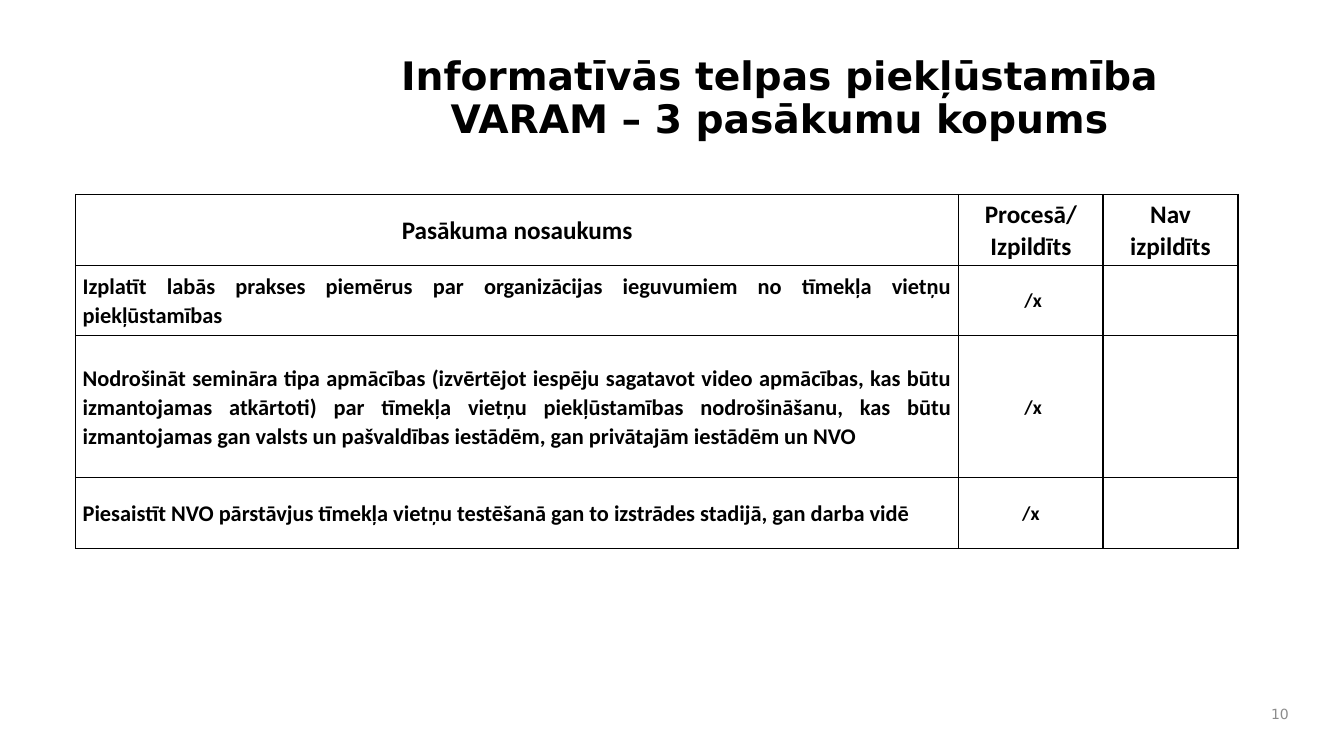
from lxml.etree import SubElement
from pptx import Presentation
from pptx.dml.color import RGBColor
from pptx.enum.text import MSO_ANCHOR as Anchor, MSO_AUTO_SIZE as AutoSize, PP_ALIGN as Align
from pptx.oxml.ns import qn
from pptx.util import Inches, Pt

TITLE = "Informatīvās telpas piekļūstamība\vVARAM – 3 pasākumu kopums"
HEADER = ("Pasākuma nosaukums", "Procesā/ Izpildīts", "Nav izpildīts")
MEASURES = [
    ("Izplatīt labās prakses piemērus par organizācijas ieguvumiem no tīmekļa vietņu "
     "piekļūstamības", " /x", ""),
    ("Nodrošināt semināra tipa apmācības (izvērtējot iespēju sagatavot video apmācības, "
     "kas būtu izmantojamas atkārtoti) par tīmekļa vietņu piekļūstamības nodrošināšanu, "
     "kas būtu izmantojamas gan valsts un pašvaldības iestādēm, gan privātajām iestādēm "
     "un NVO", " /x", ""),
    ("Piesaistīt NVO pārstāvjus tīmekļa vietņu testēšanā gan to izstrādes stadijā, "
     "gan darba vidē", "/x", ""),
]
PAGE = "10"

COLORS = {"text": "000000", "border": "000000", "cell": "FFFFFF", "page": "8C8C8C"}
SLIDE = (13.33, 7.5)
TITLE_BOX = (2.8, 0.42, 9.86, 1.13)
PAGE_BOX = (12.44, 6.92, 0.44, 0.33)
TABLE_AT = (0.75, 1.93)
COLUMNS = (8.76, 1.43, 1.34)
ROWS = (0.7, 0.7, 1.41, 0.7)
BODY_STYLES = ((16, Align.JUSTIFY), (14, Align.CENTER), (14, Align.CENTER))
CELL_FRAME = {"margin_left": Inches(0.07), "margin_right": Inches(0.07),
              "margin_top": 0, "margin_bottom": 0, "vertical_anchor": Anchor.MIDDLE}


def assign(obj, values):
    for name, value in values.items():
        setattr(obj, name, value)


def write(tf, text, size, align, font, color="text", bold=True, **spacing):
    tf.text = text
    p = tf.paragraphs[0]
    assign(p, {"alignment": align, **spacing})
    for f in [p.font] + [r.font for r in p.runs]:
        assign(f, {"name": font, "size": Pt(size), "bold": bold})
        f.color.rgb = RGBColor.from_string(COLORS[color])


def add_borders(cell):
    tc_pr = cell._tc.get_or_add_tcPr()
    for i, side in enumerate(("lnL", "lnR", "lnT", "lnB")):
        line = SubElement(tc_pr, qn(f"a:{side}"), w=str(Pt(1)))
        fill = SubElement(line, qn("a:solidFill"))
        SubElement(fill, qn("a:srgbClr"), val=COLORS["border"])
        tc_pr.insert(i, line)


def add_title(s):
    sp = s.shapes.title
    assign(sp, dict(zip(("left", "top", "width", "height"), map(Inches, TITLE_BOX))))
    tf = sp.text_frame
    assign(tf, {"word_wrap": True, "auto_size": AutoSize.NONE,
                "vertical_anchor": Anchor.MIDDLE})
    write(tf, TITLE, 28, Align.CENTER, "DejaVu Sans", line_spacing=0.9)


def add_measures(s):
    box = map(Inches, (*TABLE_AT, sum(COLUMNS), sum(ROWS)))
    table = s.shapes.add_table(len(ROWS), len(COLUMNS), *box).table
    for column, width in zip(table.columns, COLUMNS):
        column.width = Inches(width)
    for row, height in zip(table.rows, ROWS):
        row.height = Inches(height)
    for r, texts in enumerate([HEADER, *MEASURES]):
        for c, text in enumerate(texts):
            cell = table.cell(r, c)
            size, align = BODY_STYLES[c] if r else (18, Align.CENTER)
            assign(cell, CELL_FRAME)
            cell.fill.solid()
            cell.fill.fore_color.rgb = RGBColor.from_string(COLORS["cell"])
            add_borders(cell)
            write(cell.text_frame, text, size, align, "Calibri",
                  line_spacing=1.07, space_after=Pt(4))


def add_page_number(s):
    tf = s.shapes.add_textbox(*map(Inches, PAGE_BOX)).text_frame
    assign(tf, {"word_wrap": True, "vertical_anchor": Anchor.MIDDLE})
    write(tf, PAGE, 10, Align.RIGHT, "DejaVu Sans", "page", False)


def main():
    prs = Presentation()
    prs.slide_width, prs.slide_height = map(Inches, SLIDE)
    s = prs.slides.add_slide(prs.slide_layouts[5])
    add_title(s)
    add_measures(s)
    add_page_number(s)
    prs.save("out.pptx")


if __name__ == "__main__":
    main()
